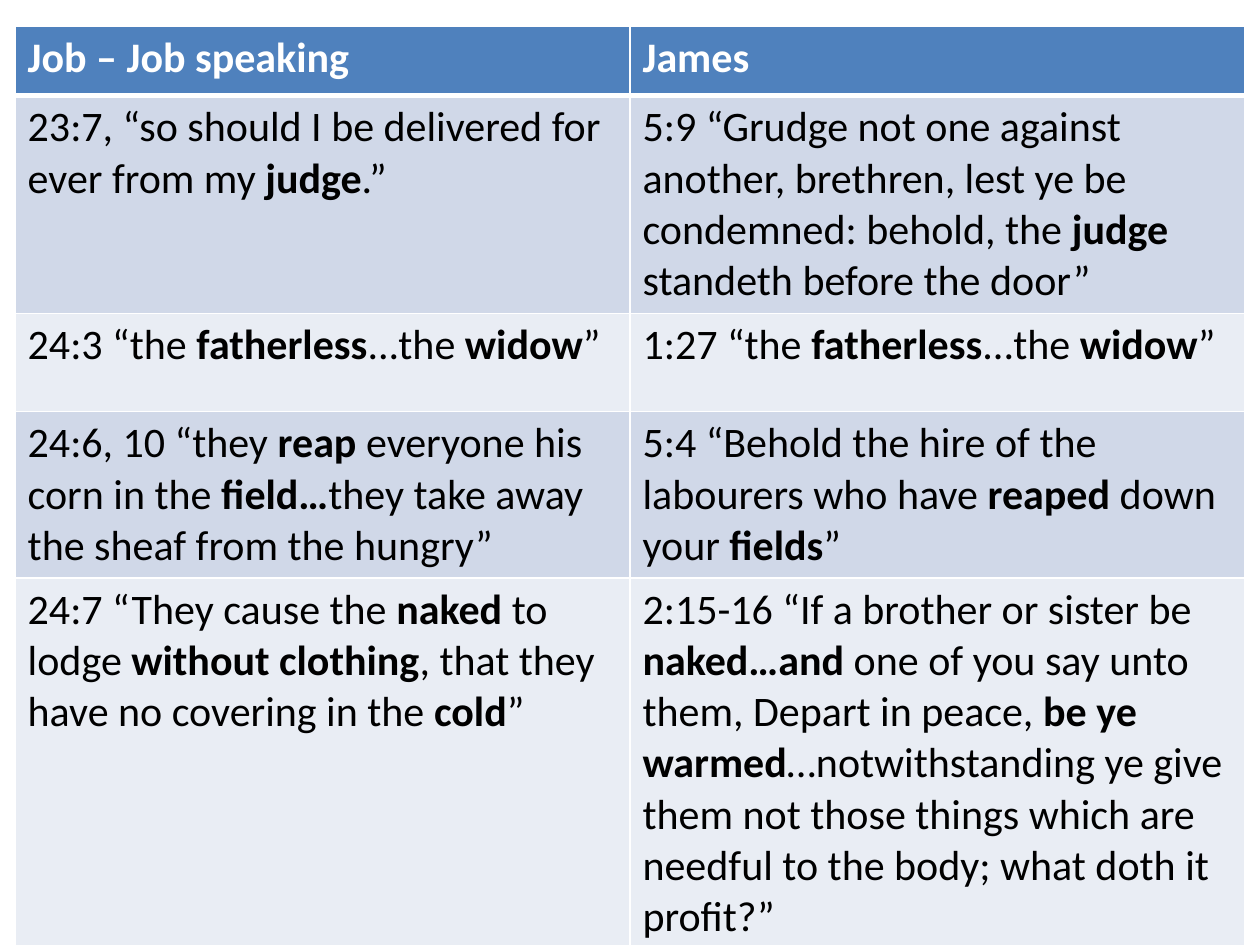
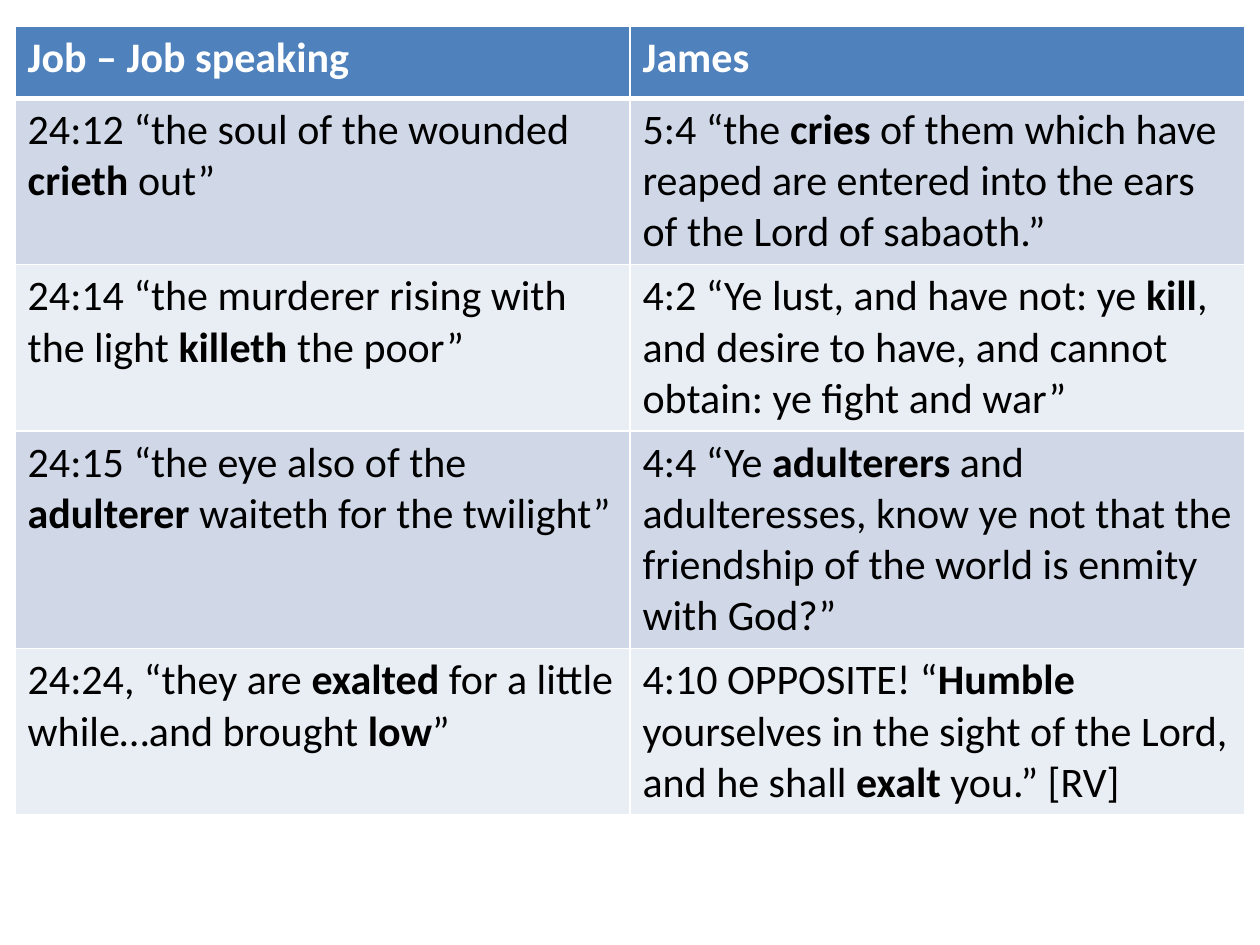
from pptx import Presentation
from pptx.dml.color import RGBColor
from pptx.oxml import parse_xml
from pptx.oxml.ns import nsdecls
from pptx.util import Inches, Pt

HUES = {"head": "4F81BD", "odd": "D0D8E8", "even": "E9EDF4",
        "line": "FFFFFF", "light": "FFFFFF", "dark": "000000"}
FONT = {"name": "Calibri", "size": Pt(24)}
HEADS = ("Job – Job speaking", "James")

# The slide is a grid of 1000 columns by 750 rows
COLS, ROWS = 1000, 750
WIDE, HIGH = Inches(10), Inches(7.5)
BOX = (12, 21, 976)  # left, top, width in grid units

# Words between asterisks are bold
PAGES = [
    ((55, 164, 78, 114, 319), [
        ("23:7, “so should I be delivered for ever from my *judge*.”",
         "5:9 “Grudge not one against another, brethren, lest ye be "
         "condemned: behold, the *judge *standeth before the door”"),
        ("24:3 “the *fatherless*...the *widow*”",
         "1:27 “the *fatherless*...the *widow*”"),
        ("24:6, 10 “they *reap* everyone his corn in the *field…*they "
         "take away the sheaf from the hungry”",
         "5:4 “Behold the hire of the labourers who have *reaped* down "
         "your *fields*”"),
        ("24:7 “They cause the *naked* to lodge *without clothing*, that "
         "they have no covering in the *cold*”",
         "2:15-16 “If a brother or sister be *naked…and* one of you say "
         "unto them, Depart in peace, *be ye warmed*…notwithstanding ye "
         "give them not those things which are needful to the body; what "
         "doth it profit?”"),
    ]),
    ((57, 103, 80, 118, 71), [
        ("24:12 “the soul of the wounded *crieth* out”",
         "5:4 “the *cries* of them which have reaped are entered into the "
         "ears of the Lord of sabaoth.”"),
        ("24:14 “the murderer rising with the light *killeth* the poor”",
         "4:2 “Ye lust, and have not: ye *kill*, and desire to have, and "
         "cannot obtain: ye fight and war”"),
        ("24:15 “the eye also of the *adulterer *waiteth for the twilight”",
         "4:4 “Ye *adulterers* and adulteresses, know ye not that the "
         "friendship of the world is enmity with God?”"),
        ("24:24, “they are *exalted* for a little while…and brought *low*”",
         "4:10 OPPOSITE! “*Humble* yourselves in the sight of the Lord, "
         "and he shall *exalt* you.” [RV]"),
    ]),
]


def across(units):
    return round(WIDE * units / COLS)


def down(units):
    return round(HIGH * units / ROWS)


def edge(cell, sides):
    """Draw the cell's borders; sides maps a side to its width in points."""
    props = cell._tc.get_or_add_tcPr()
    for spot, (side, width) in enumerate(sides.items()):
        props.insert(spot, parse_xml(
            f'<a:ln{side} {nsdecls("a")} w="{Pt(width)}"><a:solidFill>'
            f'<a:srgbClr val="{HUES["line"]}"/></a:solidFill></a:ln{side}>'))


def write(cell, text, hue, bold):
    """Fill a cell with runs, switching weight at each asterisk."""
    para = cell.text_frame.paragraphs[0]
    for turn, part in enumerate(text.split("*")):
        if not part:
            continue
        run = para.add_run()
        run.text = part
        for key, value in {**FONT, "bold": bold or turn % 2 == 1}.items():
            setattr(run.font, key, value)
        run.font.color.rgb = RGBColor.from_string(HUES[hue])


def verses(slide, box, highs, pairs):
    """Place the two-column comparison of verses in the box."""
    left, top, width = box
    lines = [HEADS, *pairs]
    table = slide.shapes.add_table(
        len(lines), len(HEADS), across(left), down(top),
        across(width), down(sum(highs))).table
    for col in table.columns:
        col.width = across(width / len(HEADS))

    for y, (high, line) in enumerate(zip(highs, lines)):
        table.rows[y].height = down(high)
        head = y == 0
        band = "head" if head else "odd" if y % 2 else "even"
        # A thick rule parts the header from the verses
        sides = {"L": 1, "R": 1, "T": 3 if y == 1 else 1, "B": 3 if head else 1}
        for x, text in enumerate(line):
            cell = table.cell(y, x)
            cell.fill.solid()
            cell.fill.fore_color.rgb = RGBColor.from_string(HUES[band])
            edge(cell, sides)
            write(cell, text, "light" if head else "dark", head)


def main():
    deck = Presentation()
    deck.slide_width, deck.slide_height = WIDE, HIGH
    blank = deck.slide_layouts[6]
    for highs, pairs in PAGES:
        verses(deck.slides.add_slide(blank), BOX, highs, pairs)
    deck.save("out.pptx")


if __name__ == "__main__":
    main()
